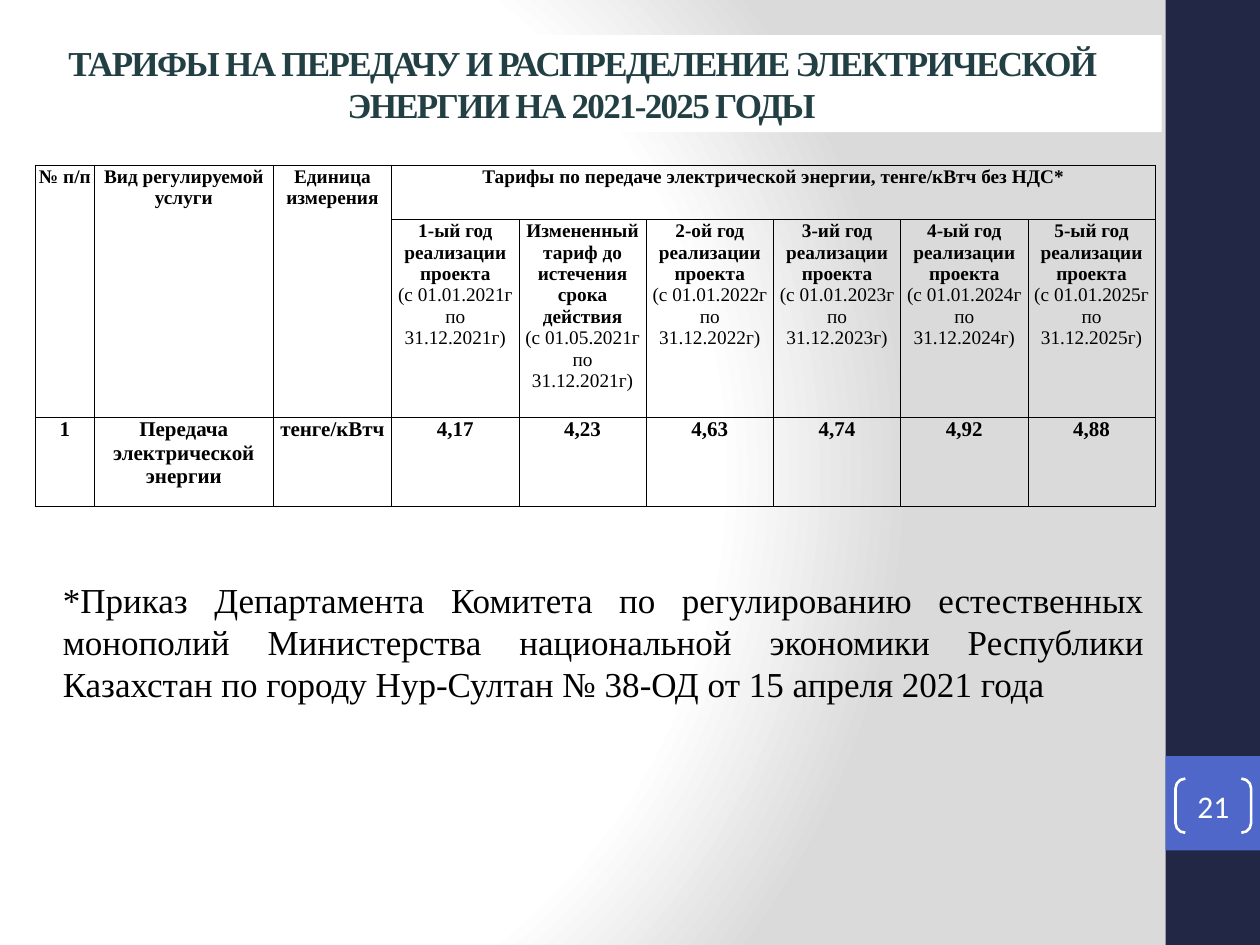
from dataclasses import dataclass

from lxml.etree import SubElement
from pptx import Presentation
from pptx.dml.color import RGBColor
from pptx.enum.shapes import MSO_SHAPE
from pptx.enum.text import MSO_ANCHOR, PP_ALIGN
from pptx.oxml import parse_xml
from pptx.oxml.ns import nsdecls, qn
from pptx.util import Inches, Pt

COLORS = {
    "navy": "212745",
    "blue": "4E67C8",
    "white": "FFFFFF",
    "gray": "DADADA",
    "title": "224043",
    "black": "000000",
}
SERIF = "Times New Roman"


@dataclass
class Panel:
    left: float
    top: float
    width: float
    height: float
    fill: str


@dataclass
class Tariff:
    heading: str
    period: str
    value: str


TARIFFS = [
    Tariff("1-ый год реализации проекта", "(с 01.01.2021г по 31.12.2021г)", "4,17"),
    Tariff("Измененный тариф до истечения срока действия",
           "(с 01.05.2021г по 31.12.2021г)", "4,23"),
    Tariff("2-ой год реализации проекта", "(с 01.01.2022г по 31.12.2022г)", "4,63"),
    Tariff("3-ий год реализации проекта", "(с 01.01.2023г по 31.12.2023г)", "4,74"),
    Tariff("4-ый год реализации проекта", "(с 01.01.2024г по 31.12.2024г)", "4,92"),
    Tariff("5-ый год реализации проекта", "(с 01.01.2025г по 31.12.2025г)", "4,88"),
]
SERVICE_COLUMNS = [
    ("№ п/п", "1", 0.47),
    ("Вид регулируемой услуги", "Передача электрической энергии", 1.42),
    ("Единица измерения", "тенге/кВтч", 0.94),
]
TARIFF_WIDTH = 1.01
ROW_HEIGHTS = [0.43, 1.57, 0.71]


def rgb(name: str) -> RGBColor:
    return RGBColor.from_string(COLORS[name])


def format_run(run, size: float, color: str = "black", bold: bool = False,
               font: str = SERIF) -> None:
    run.font.name = font
    run.font.size = Pt(size)
    run.font.bold = bold
    run.font.color.rgb = rgb(color)


def set_background(slide) -> None:
    stops = "".join(
        f'<a:gs pos="{position * 1000}"><a:srgbClr val="{COLORS[color]}"/></a:gs>'
        for position, color in [(0, "white"), (75, "white"), (100, "gray")])
    slide.element.cSld.insert(0, parse_xml(
        f'<p:bg {nsdecls("p", "a")}><p:bgPr><a:gradFill rotWithShape="1">'
        f'<a:gsLst>{stops}</a:gsLst><a:path path="circle">'
        '<a:fillToRect l="20000" t="50000" r="100000" b="50000"/></a:path>'
        '</a:gradFill><a:effectLst/></p:bgPr></p:bg>'))


def add_panel(slide, panel: Panel):
    shape = slide.shapes.add_shape(
        MSO_SHAPE.RECTANGLE, Inches(panel.left), Inches(panel.top),
        Inches(panel.width), Inches(panel.height))
    shape.shadow.inherit = False
    shape.fill.solid()
    shape.fill.fore_color.rgb = rgb(panel.fill)
    shape.line.fill.background()
    return shape


def add_page_number(slide, number: str) -> None:
    shape = slide.shapes.add_shape(
        MSO_SHAPE.DOUBLE_BRACKET, Inches(9.33), Inches(6.18), Inches(0.6), Inches(0.43))
    shape.adjustments[0] = 0.18
    shape.shadow.inherit = False
    shape.fill.background()
    shape.line.color.rgb = rgb("white")
    shape.line.width = Pt(1.5)
    frame = shape.text_frame
    frame.margin_left = frame.margin_right = frame.margin_top = frame.margin_bottom = 0
    frame.vertical_anchor = MSO_ANCHOR.MIDDLE
    frame.text = number
    frame.paragraphs[0].alignment = PP_ALIGN.CENTER
    format_run(frame.paragraphs[0].runs[0], 18, "white", font="Calibri")


def add_title(slide, text: str) -> None:
    frame = add_panel(slide, Panel(0.01, 0.28, 9.21, 0.77, "white")).text_frame
    frame.word_wrap = True
    frame.vertical_anchor = MSO_ANCHOR.MIDDLE
    frame.text = text
    paragraph = frame.paragraphs[0]
    paragraph.alignment = PP_ALIGN.CENTER
    run = paragraph.runs[0]
    format_run(run, 20, "title", bold=True)
    run.font._element.set("spc", "-100")


def add_footnote(slide, text: str) -> None:
    box = slide.shapes.add_textbox(Inches(0.28), Inches(4.54), Inches(8.9), Inches(1.11))
    frame = box.text_frame
    frame.word_wrap = True
    frame.text = text
    paragraph = frame.paragraphs[0]
    paragraph.alignment = PP_ALIGN.JUSTIFY
    paragraph.space_before = Pt(4)
    paragraph._p.get_or_add_pPr().set("marL", str(Inches(0.12)))
    format_run(paragraph.runs[0], 20)


def style_cell(cell) -> None:
    cell.margin_left = cell.margin_right = cell.margin_top = Inches(0.01)
    cell.margin_bottom = 0
    properties = cell._tc.get_or_add_tcPr()
    for side in ("a:lnL", "a:lnR", "a:lnT", "a:lnB"):
        line = SubElement(properties, qn(side), w=str(Pt(0.5)))
        SubElement(SubElement(line, qn("a:solidFill")), qn("a:srgbClr"), val=COLORS["black"])
    cell.fill.background()


def write_cell(cell, text: str, size: float, detail: str = "") -> None:
    cell.text_frame.text = text
    paragraph = cell.text_frame.paragraphs[0]
    paragraph.alignment = PP_ALIGN.CENTER
    format_run(paragraph.runs[0], size, bold=True)
    if detail:
        paragraph.add_line_break()
        run = paragraph.add_run()
        run.text = detail
        format_run(run, size)


def add_tariff_table(slide) -> None:
    widths = [width for _, _, width in SERVICE_COLUMNS] + [TARIFF_WIDTH] * len(TARIFFS)
    table = slide.shapes.add_table(
        len(ROW_HEIGHTS), len(widths), Inches(0.28), Inches(1.31),
        Inches(sum(widths)), Inches(sum(ROW_HEIGHTS))).table
    table.first_row = table.horz_banding = False
    for column, width in zip(table.columns, widths):
        column.width = Inches(width)
    for row, height in zip(table.rows, ROW_HEIGHTS):
        row.height = Inches(height)
    for cell in table.iter_cells():
        style_cell(cell)

    # Service columns, with headings two rows high
    for index, (heading, value, _) in enumerate(SERVICE_COLUMNS):
        table.cell(0, index).merge(table.cell(1, index))
        write_cell(table.cell(0, index), heading, 11)
        write_cell(table.cell(2, index), value, 12)

    # Tariff columns under a shared heading
    first = len(SERVICE_COLUMNS)
    table.cell(0, first).merge(table.cell(0, len(widths) - 1))
    write_cell(table.cell(0, first),
               "Тарифы по передаче электрической энергии, тенге/кВтч без НДС*", 11)
    for index, tariff in enumerate(TARIFFS, first):
        write_cell(table.cell(1, index), tariff.heading, 11, tariff.period)
        write_cell(table.cell(2, index), tariff.value, 12)


def main() -> None:
    presentation = Presentation()
    presentation.slide_width, presentation.slide_height = Inches(10), Inches(7.5)
    slide = presentation.slides.add_slide(presentation.slide_layouts[6])
    set_background(slide)

    # Side band and page number
    add_panel(slide, Panel(9.25, 0, 0.75, 7.5, "navy"))
    add_panel(slide, Panel(9.25, 6, 0.75, 0.75, "blue"))
    add_page_number(slide, "21")

    # Content
    add_footnote(slide, "*Приказ Департамента Комитета по регулированию естественных "
                        "монополий Министерства национальной экономики Республики "
                        "Казахстан по городу Нур-Султан № 38-ОД от 15 апреля 2021 года")
    add_title(slide, "ТАРИФЫ НА ПЕРЕДАЧУ И РАСПРЕДЕЛЕНИЕ ЭЛЕКТРИЧЕСКОЙ "
                     "ЭНЕРГИИ НА 2021-2025 ГОДЫ")
    add_tariff_table(slide)
    presentation.save("out.pptx")


if __name__ == "__main__":
    main()
